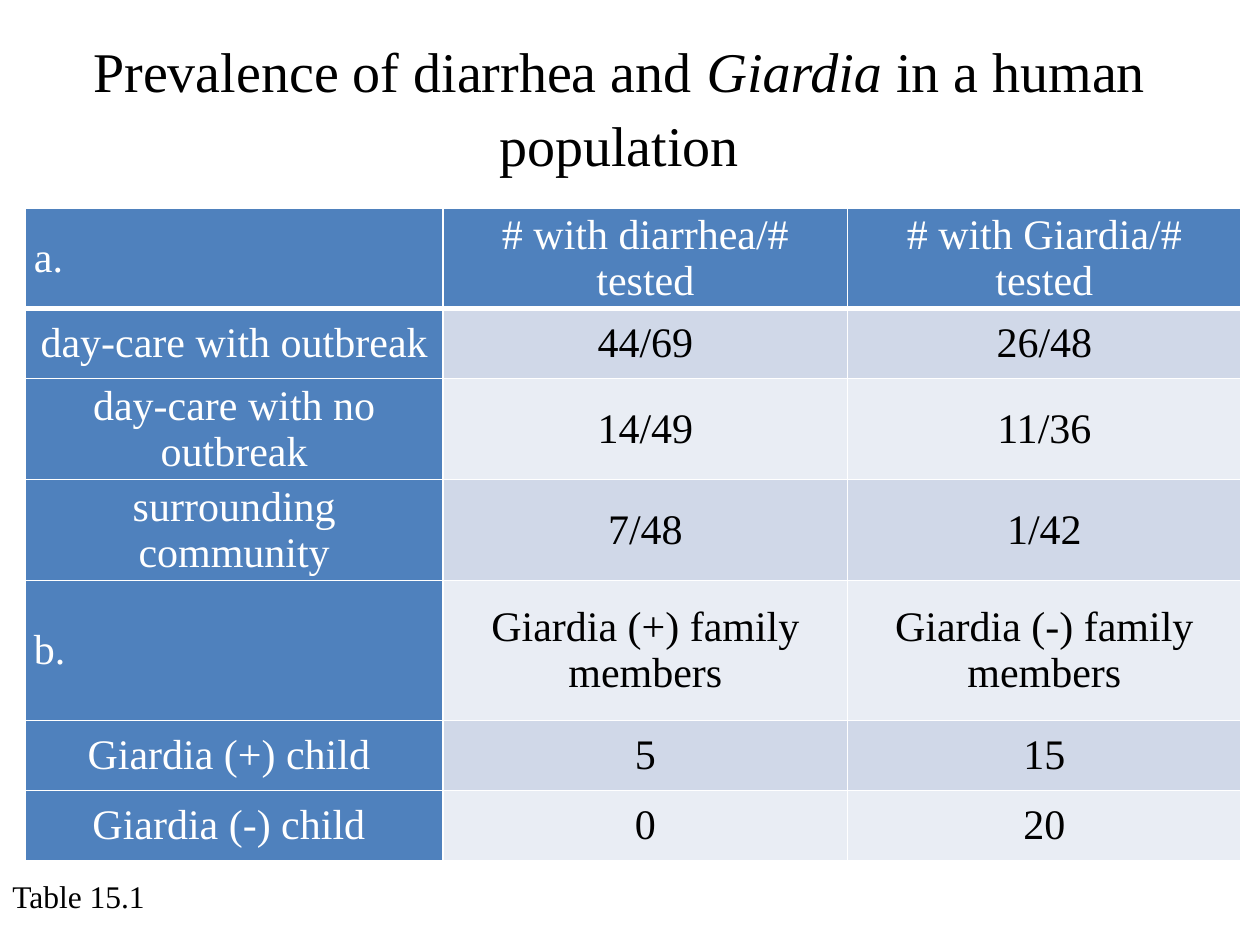
from lxml import etree
from pptx import Presentation
from pptx.dml.color import RGBColor
from pptx.enum.text import MSO_ANCHOR, MSO_AUTO_SIZE, PP_ALIGN
from pptx.oxml.ns import qn
from pptx.util import Pt

LEFT, CENTER = PP_ALIGN.LEFT, PP_ALIGN.CENTER
MIDDLE = MSO_ANCHOR.MIDDLE
GROW = MSO_AUTO_SIZE.SHAPE_TO_FIT_TEXT
BLUE, WHITE, BLACK = "4F81BD", "FFFFFF", "000000"
BANDS = ["E9EDF4", "D0D8E8"]


def style(para, size, color, align):
    para.alignment = align
    para.font.name = "Times New Roman"
    para.font.size = Pt(size)
    para.font.color.rgb = RGBColor.from_string(color)


def set_borders(cell, widths):
    """Draw white cell borders; widths maps a side (L, R, T, B) to points."""
    properties = cell._tc.get_or_add_tcPr()
    for position, (side, width) in enumerate(widths.items()):
        line = etree.Element(qn(f"a:ln{side}"), w=str(Pt(width)))
        fill = etree.SubElement(line, qn("a:solidFill"))
        etree.SubElement(fill, qn("a:srgbClr"), val=WHITE)
        properties.insert(position, line)


deck = Presentation()
deck.slide_width, deck.slide_height = Pt(720), Pt(540)
page = deck.slides.add_slide(deck.slide_layouts[6])

# Title
title = page.shapes.add_textbox(Pt(14.4), Pt(13.7), Pt(679), Pt(85)).text_frame
title.word_wrap = True
title.auto_size = GROW
para = title.paragraphs[0]
style(para, 32, BLACK, CENTER)
para.line_spacing = 1.1
for text in ["Prevalence of diarrhea and ", "Giardia", " in a human population"]:
    span = para.add_run()
    span.text = text
    span.font.italic = text == "Giardia"

# Caption
caption = page.shapes.add_textbox(Pt(0), Pt(495.4), Pt(95.8), Pt(28.8)).text_frame
caption.word_wrap = False
caption.auto_size = GROW
para = caption.paragraphs[0]
para.text = "Table 15.1"
style(para, 18, BLACK, LEFT)
para.line_spacing = 1.1

# Prevalence table
rows = [
    ["a.", "# with diarrhea/# tested", "# with Giardia/# tested"],
    ["day-care with outbreak", "44/69", "26/48"],
    ["day-care with no outbreak", "14/49", "11/36"],
    ["surrounding community", "7/48", "1/42"],
    ["b.", "Giardia (+) family members", "Giardia (-) family members"],
    ["Giardia (+) child ", "5", "15"],
    ["Giardia (-) child ", "0", "20"],
]
column_widths = [238.8, 231.2, 224.8]
row_height = 40
table = page.shapes.add_table(len(rows), len(column_widths), Pt(14.4), Pt(118.8),
                              Pt(sum(column_widths)), Pt(row_height * 8)).table
table.first_col = True
for column, width in zip(table.columns, column_widths):
    column.width = Pt(width)

for r, texts in enumerate(rows):
    section_start = texts[0] in ("a.", "b.")
    table.rows[r].height = Pt(row_height * (2 if texts[0] == "b." else 1))
    for c, text in enumerate(texts):
        cell = table.cell(r, c)
        heading = r == 0 or c == 0
        cell.fill.solid()
        cell.fill.fore_color.rgb = RGBColor.from_string(BLUE if heading else BANDS[r % 2])
        cell.vertical_anchor = MIDDLE
        cell.margin_left = cell.margin_right = Pt(5)
        cell.margin_top = cell.margin_bottom = Pt(0)
        para = cell.text_frame.paragraphs[0]
        para.text = text
        style(para, 24, WHITE if heading else BLACK,
              LEFT if section_start and c == 0 else CENTER)
        para.font.bold = False
        set_borders(cell, {"L": 1, "R": 1, "T": 3 if r == 1 else 1, "B": 3 if r == 0 else 1})

deck.save("out.pptx")
